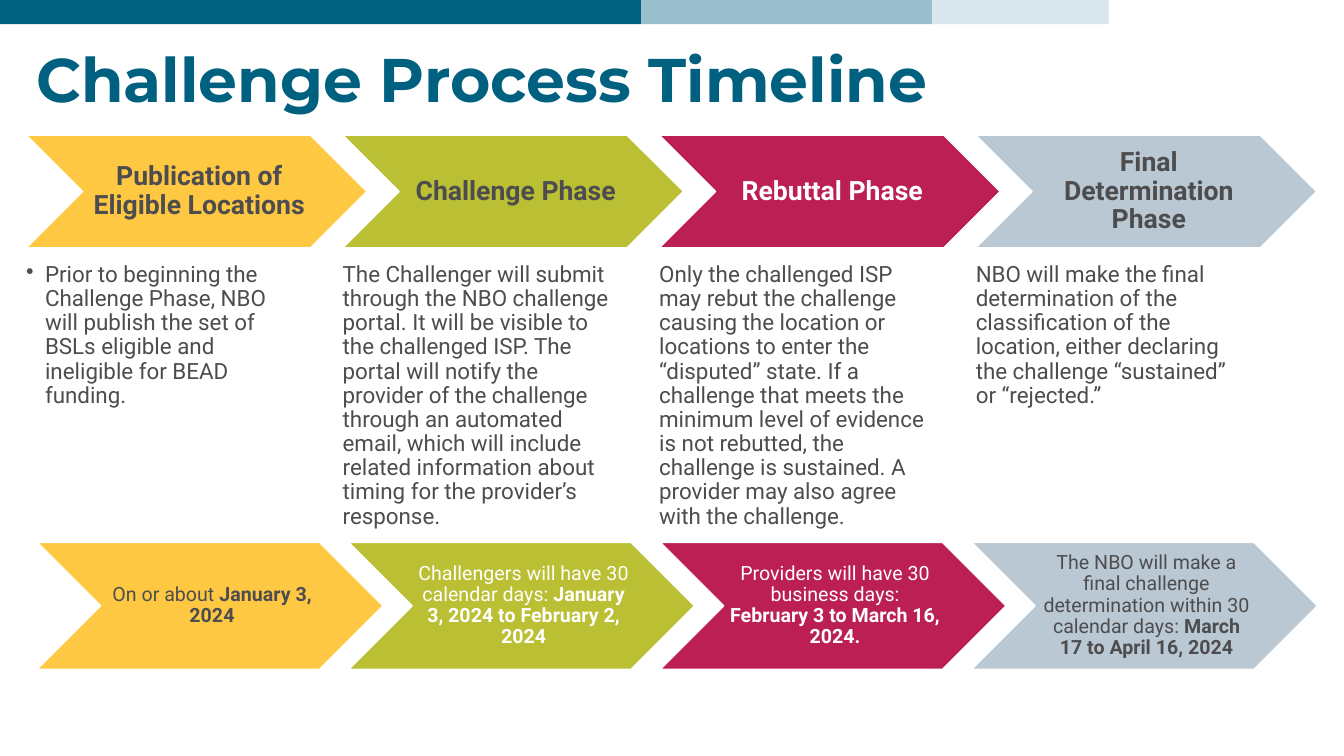
from pptx import Presentation
from pptx.dml.color import RGBColor
from pptx.enum.shapes import MSO_SHAPE
from pptx.enum.text import MSO_ANCHOR, PP_ALIGN
from pptx.oxml.ns import qn
from pptx.util import Pt
from lxml import etree

RECTANGLE, CHEVRON = MSO_SHAPE.RECTANGLE, MSO_SHAPE.CHEVRON
TOP, MIDDLE = MSO_ANCHOR.TOP, MSO_ANCHOR.MIDDLE
LEFT, CENTER = PP_ALIGN.LEFT, PP_ALIGN.CENTER

TEAL = RGBColor(0x00, 0x60, 0x7F)
MID_TEAL = RGBColor(0x99, 0xBF, 0xCC)
PALE_TEAL = RGBColor(0xD9, 0xE7, 0xEC)
YELLOW = RGBColor(0xFF, 0xC8, 0x43)
GREEN = RGBColor(0xBA, 0xBF, 0x33)
CRIMSON = RGBColor(0xBB, 0x1F, 0x53)
GRAY_BLUE = RGBColor(0xB9, 0xC8, 0xD3)
CHARCOAL = RGBColor(0x4D, 0x4D, 0x4F)
WHITE = RGBColor(0xFF, 0xFF, 0xFF)

prs = Presentation()
prs.slide_width, prs.slide_height = Pt(960), Pt(540)
slide = prs.slides.add_slide(prs.slide_layouts[6])


def write(shape, text, bold_text="", size=16, font="Roboto", color=CHARCOAL, bold=False,
          align=LEFT, anchor=TOP, insets=(0, 0, 0, 0), bullet=False):
    frame = shape.text_frame
    frame.word_wrap = True
    frame.vertical_anchor = anchor
    (frame.margin_left, frame.margin_top,
     frame.margin_right, frame.margin_bottom) = [Pt(inset) for inset in insets]
    paragraph = frame.paragraphs[0]
    paragraph.alignment = align
    paragraph.line_spacing = 0.9
    if bullet:
        properties = paragraph._p.get_or_add_pPr()
        properties.set("marL", str(Pt(13.5)))
        properties.set("indent", str(-Pt(13.5)))
        etree.SubElement(properties, qn("a:buChar")).set("char", "•")
    for words, is_bold in ((text, bold), (bold_text, True)):
        if words:
            run = paragraph.add_run()
            run.text = words
            run.font.name, run.font.size = font, Pt(size)
            run.font.bold, run.font.color.rgb = is_bold, color


def add_block(kind, left, top, width, height, fill, outline=None):
    block = slide.shapes.add_shape(kind, Pt(left), Pt(top), Pt(width), Pt(height))
    block.shadow.inherit = False
    block.fill.solid()
    block.fill.fore_color.rgb = fill
    if outline is None:
        block.line.fill.background()
    else:
        block.line.color.rgb = outline
        block.line.width = Pt(1)
    return block


# Header band
band_left = 0
for band_width, band_color in ((458, TEAL), (208, MID_TEAL), (126, PALE_TEAL)):
    add_block(RECTANGLE, band_left, 0, band_width, 17.3, band_color)
    band_left += band_width

# Title
title = slide.shapes.add_textbox(Pt(18.7), Pt(31.7), Pt(773.3), Pt(90.7))
write(title, "Challenge Process Timeline", size=44, font="Montserrat", color=TEAL,
      bold=True, insets=(7.2, 3.6, 7.2, 3.6))

# Phases: fill, name, name colour, description, timing, dates, timing colour
phases = [
    (YELLOW, "Publication of Eligible Locations", CHARCOAL,
     "Prior to beginning the Challenge Phase, NBO will publish the set of BSLs eligible "
     "and ineligible for BEAD funding.",
     "On or about ", "January 3, 2024", CHARCOAL),
    (GREEN, "Challenge Phase", CHARCOAL,
     "The Challenger will submit through the NBO challenge portal. It will be visible to "
     "the challenged ISP. The portal will notify the provider of the challenge through an "
     "automated email, which will include related information about timing for the "
     "provider’s response.",
     "Challengers will have 30 calendar days: ", "January 3, 2024 to February 2, 2024", WHITE),
    (CRIMSON, "Rebuttal Phase", WHITE,
     "Only the challenged ISP may rebut the challenge causing the location or locations to "
     "enter the “disputed” state. If a challenge that meets the minimum level of evidence "
     "is not rebutted, the challenge is sustained. A provider may also agree with the "
     "challenge.",
     "Providers will have 30 business days: ", "February 3 to March 16, 2024.", WHITE),
    (GRAY_BLUE, "Final Determination Phase", CHARCOAL,
     "NBO will make the final determination of the classification of the location, either "
     "declaring the challenge “sustained” or “rejected.”",
     "The NBO will make a final challenge determination within 30 calendar days: ",
     "March 17 to April 16, 2024", CHARCOAL),
]

# Phase names with their descriptions below
for column, (fill, name, name_color, description, *_) in enumerate(phases):
    phase_left = 18.7 + column * 226.1
    phase = add_block(CHEVRON, phase_left, 96.5, 243.4, 80.6, fill, WHITE)
    write(phase, name, size=19, color=name_color, bold=True, align=CENTER, anchor=MIDDLE,
          insets=(5.7, 1.9, 1.9, 1.9))
    details = slide.shapes.add_textbox(Pt(phase_left), Pt(187.9), Pt(194.4), Pt(192.2))
    write(details, description, bullet=column == 0)

# Dates
for column, (fill, *_, timing, dates, timing_color) in enumerate(phases):
    period = add_block(CHEVRON, 26.6 + column * 222.5, 387.4, 247, 90.7, fill, WHITE)
    write(period, timing, dates, size=14, color=timing_color, align=CENTER, anchor=MIDDLE,
          insets=(4.2, 1.4, 1.4, 1.4))

prs.save("out.pptx")
